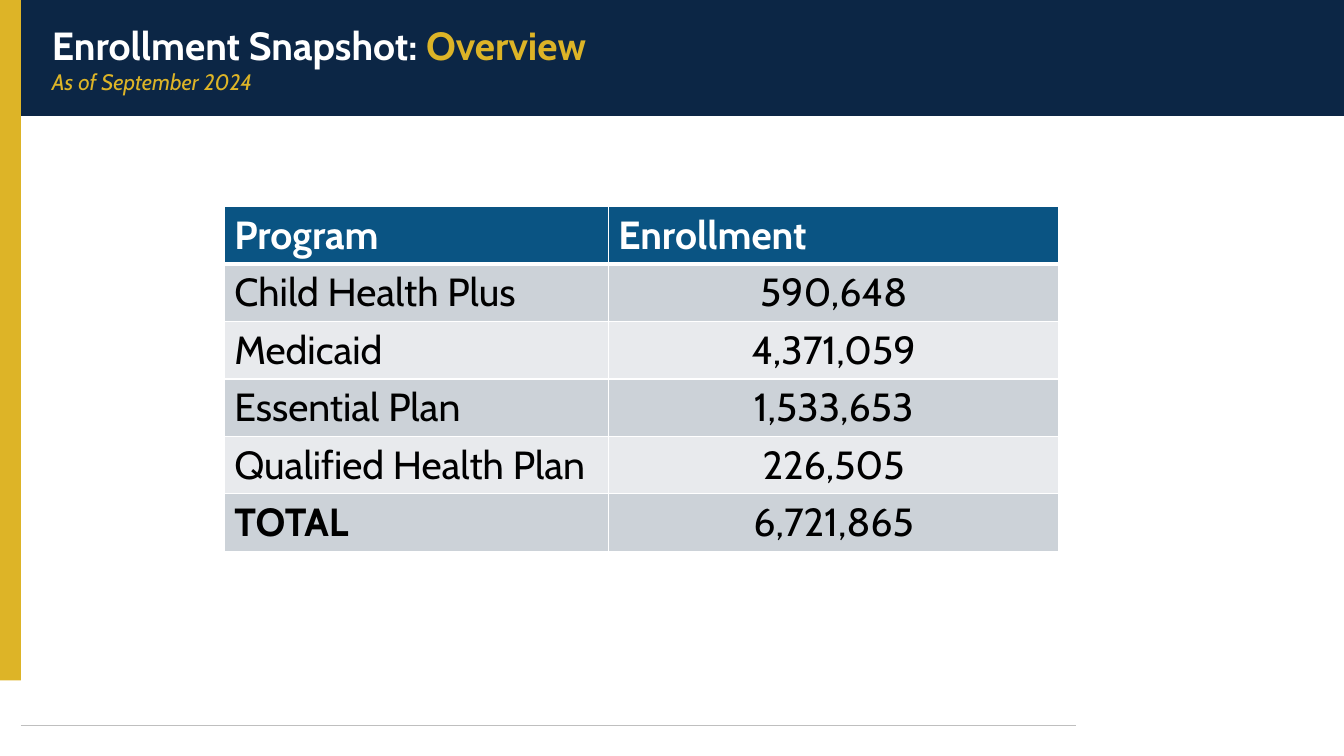
from lxml import etree
from pptx import Presentation
from pptx import util as u
from pptx.dml.color import RGBColor
from pptx.enum import shapes, text
from pptx.oxml import ns

NAVY = RGBColor(0x0C, 0x26, 0x45)
GOLD = RGBColor(0xDD, 0xB4, 0x27)
BLUE = RGBColor(0x0A, 0x54, 0x83)
GREY = RGBColor(0xBF, 0xBF, 0xBF)
BANDS = RGBColor(0xCC, 0xD2, 0xD8), RGBColor(0xE8, 0xEA, 0xED)
WHITE = RGBColor(0xFF, 0xFF, 0xFF)
BLACK = RGBColor(0, 0, 0)

FONT = "Cabin"
WIDTH, HEIGHT = u.Inches(13.33), u.Inches(7.5)
COLUMN, ROW = WIDTH / 64, HEIGHT / 50

ENROLLMENT = [
    ("Program", "Enrollment"),
    ("Child Health Plus", "590,648"),
    ("Medicaid", "4,371,059"),
    ("Essential Plan", "1,533,653"),
    ("Qualified Health Plan", "226,505"),
    ("TOTAL", "6,721,865"),
]


def grid(left, top, width, height):
    return int(left * COLUMN), int(top * ROW), int(width * COLUMN), int(height * ROW)


def add_span(para, words, color, **formats):
    span = para.add_run()
    span.text = words
    span.font.color.rgb = color
    for name, value in {"name": FONT, "size": u.Pt(28), **formats}.items():
        setattr(span.font, name, value)


def add_block(page, box, color):
    block = page.shapes.add_shape(shapes.MSO_SHAPE.RECTANGLE, *box)
    block.shadow.inherit = False
    block.fill.solid()
    block.fill.fore_color.rgb = color
    block.line.fill.background()


def add_header(page, box):
    add_block(page, box, NAVY)
    left, top, width, height = box
    inset = int(COLUMN)
    title = page.shapes.add_textbox(
        left + inset, top + int(height * 0.1), width - inset, int(height * 0.8))
    frame = title.text_frame
    frame.word_wrap = True
    frame.vertical_anchor = text.MSO_ANCHOR.MIDDLE
    heading = frame.paragraphs[0]
    add_span(heading, "Enrollment Snapshot: ", WHITE, bold=True)
    add_span(heading, "Overview", GOLD, bold=True)
    add_span(frame.add_paragraph(), "As of September 2024", GOLD, size=u.Pt(16), italic=True)


def add_footer_rule(page, box):
    left, top, width, height = box
    rule = page.shapes.add_connector(
        shapes.MSO_CONNECTOR.STRAIGHT, left, top, left + width, top + height)
    rule.line.color.rgb = GREY
    rule.line.width = u.Pt(1)
    etree.SubElement(rule._element.spPr, ns.qn("a:effectLst"))


def set_borders(cell, bottom):
    properties = cell._tc.get_or_add_tcPr()
    sides = {"lnL": 1, "lnR": 1, "lnT": 1, "lnB": bottom}
    for index, (side, points) in enumerate(sides.items()):
        line = etree.Element(ns.qn(f"a:{side}"), w=str(u.Pt(points)))
        fill = etree.SubElement(line, ns.qn("a:solidFill"))
        etree.SubElement(fill, ns.qn("a:srgbClr"), val=str(WHITE))
        properties.insert(index, line)


def add_enrollment_table(page, box):
    table = page.shapes.add_table(len(ENROLLMENT), 2, *box).table
    for column, share in zip(table.columns, (0.46, 0.54)):
        column.width = int(box[2] * share)
    for row, values in enumerate(ENROLLMENT):
        header = row == 0
        for column, value in enumerate(values):
            cell = table.cell(row, column)
            cell.fill.solid()
            cell.fill.fore_color.rgb = BLUE if header else BANDS[(row - 1) % 2]
            set_borders(cell, 3 if header else 1)
            para = cell.text_frame.paragraphs[0]
            centred = column == 1 and not header
            para.alignment = text.PP_ALIGN.CENTER if centred else text.PP_ALIGN.LEFT
            add_span(para, value, WHITE if header else BLACK,
                     bold=header or value == "TOTAL")


def main():
    deck = Presentation()
    deck.slide_width, deck.slide_height = WIDTH, HEIGHT
    page = deck.slides.add_slide(deck.slide_layouts[6])
    add_header(page, grid(1, 0, 63, 7.67))
    add_footer_rule(page, grid(1, 48, 50.26, 0))
    add_block(page, grid(0, 0, 1, 45), GOLD)
    add_enrollment_table(page, grid(10.68, 13.67, 39.75, 22.8))
    deck.save("out.pptx")


if __name__ == "__main__":
    main()
